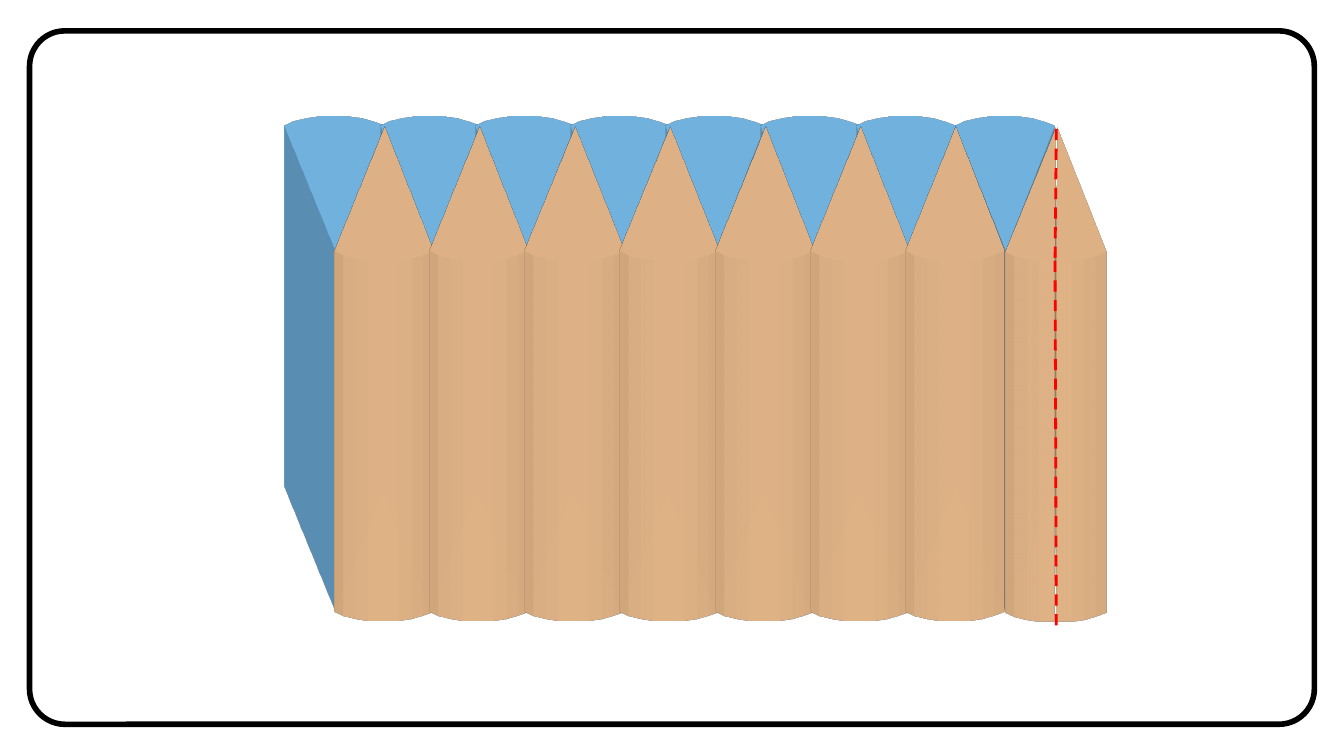
from lxml import etree
from pptx import Presentation
from pptx.dml.color import RGBColor
from pptx.enum.dml import MSO_LINE
from pptx.enum.shapes import MSO_CONNECTOR, MSO_SHAPE
from pptx.oxml.ns import qn
from pptx.util import Pt

COLORS = {
    "paper": "FFFFFF",
    "frame": "000000",
    "blue": "81CCFF",
    "tan": "FFCC99",
    "cut": "FF0000",
}
ARC = [(0, 0), (5, 2.4), (11.7, 4), (18.2, 5), (26.3, 5),
       (34, 5), (41.2, 4), (47.3, 2.2), (53.2, 0)]
APEX_SHIFT = 27
WEDGE_HEIGHT = 66.7
STEP = 51
DEPTH = 386
BLUE_LEFTS = [152.6 + STEP * i for i in range(7)] + [511.8]
TAN_LEFTS = [179.1 + STEP * i for i in range(7)]


class WedgeDrawing:
    def __init__(self, slide):
        self.shapes = slide.shapes

    def color(self, name):
        return RGBColor.from_string(COLORS[name])

    def frame(self, left, top, width, height):
        border = self.shapes.add_shape(
            MSO_SHAPE.ROUNDED_RECTANGLE, Pt(left), Pt(top), Pt(width), Pt(height))
        border.adjustments[0] = 0.051
        border.shadow.inherit = False
        border.fill.solid()
        border.fill.fore_color.rgb = self.color("paper")
        border.line.color.rgb = self.color("frame")
        border.line.width = Pt(3)

    def extrude(self, shape, color):
        properties = shape._element.spPr
        scene = etree.SubElement(properties, qn("a:scene3d"))
        etree.SubElement(scene, qn("a:camera"), prst="legacyObliqueBottom")
        etree.SubElement(scene, qn("a:lightRig"), rig="legacyFlat3", dir="r")
        solid = etree.SubElement(properties, qn("a:sp3d"),
                                 extrusionH=str(Pt(DEPTH)),
                                 prstMaterial="legacyMatte")
        side = etree.SubElement(solid, qn("a:extrusionClr"))
        etree.SubElement(side, qn("a:srgbClr"), val=COLORS[color])

    def wedge(self, parent, left, apex_y, color, first=0, last=8):
        down = 1 if color == "tan" else -1
        rim_y = apex_y + down * WEDGE_HEIGHT
        rim = [(Pt(left + x), Pt(rim_y + down * y)) for x, y in ARC[first:last + 1]]
        builder = parent.build_freeform(Pt(left + APEX_SHIFT), Pt(apex_y), scale=1.0)
        builder.add_line_segments(rim, close=True)
        wedge = builder.convert_to_shape()
        wedge.shadow.inherit = False
        wedge.fill.solid()
        wedge.fill.fore_color.rgb = self.color(color)
        wedge.line.fill.background()
        self.extrude(wedge, color)

    def cut_line(self, x1, y1, x2, y2):
        cut = self.shapes.add_connector(
            MSO_CONNECTOR.STRAIGHT, Pt(x1), Pt(y1), Pt(x2), Pt(y2))
        cut.line.color.rgb = self.color("cut")
        cut.line.width = Pt(1.5)
        cut.line.dash_style = MSO_LINE.DASH
        etree.SubElement(cut._element.spPr, qn("a:effectLst"))


def main():
    deck = Presentation()
    deck.slide_width, deck.slide_height = Pt(720), Pt(405)
    drawing = WedgeDrawing(deck.slides.add_slide(deck.slide_layouts[6]))

    drawing.frame(15.84, 16.56, 688.32, 371.52)
    blue_row = drawing.shapes.add_group_shape().shapes
    for left in BLUE_LEFTS:
        drawing.wedge(blue_row, left, 134.2, "blue")
    tan_row = drawing.shapes.add_group_shape().shapes
    for left in TAN_LEFTS:
        drawing.wedge(tan_row, left, 67.8, "tan")
    drawing.wedge(tan_row, 538.6, 68.4, "tan", last=4)
    drawing.wedge(drawing.shapes, 539.6, 68.4, "tan", first=4)

    drawing.cut_line(565.2, 139.7, 565.9, 335.5)
    drawing.cut_line(565.9, 69.1, 565.2, 141.1)

    deck.save("out.pptx")


if __name__ == "__main__":
    main()
